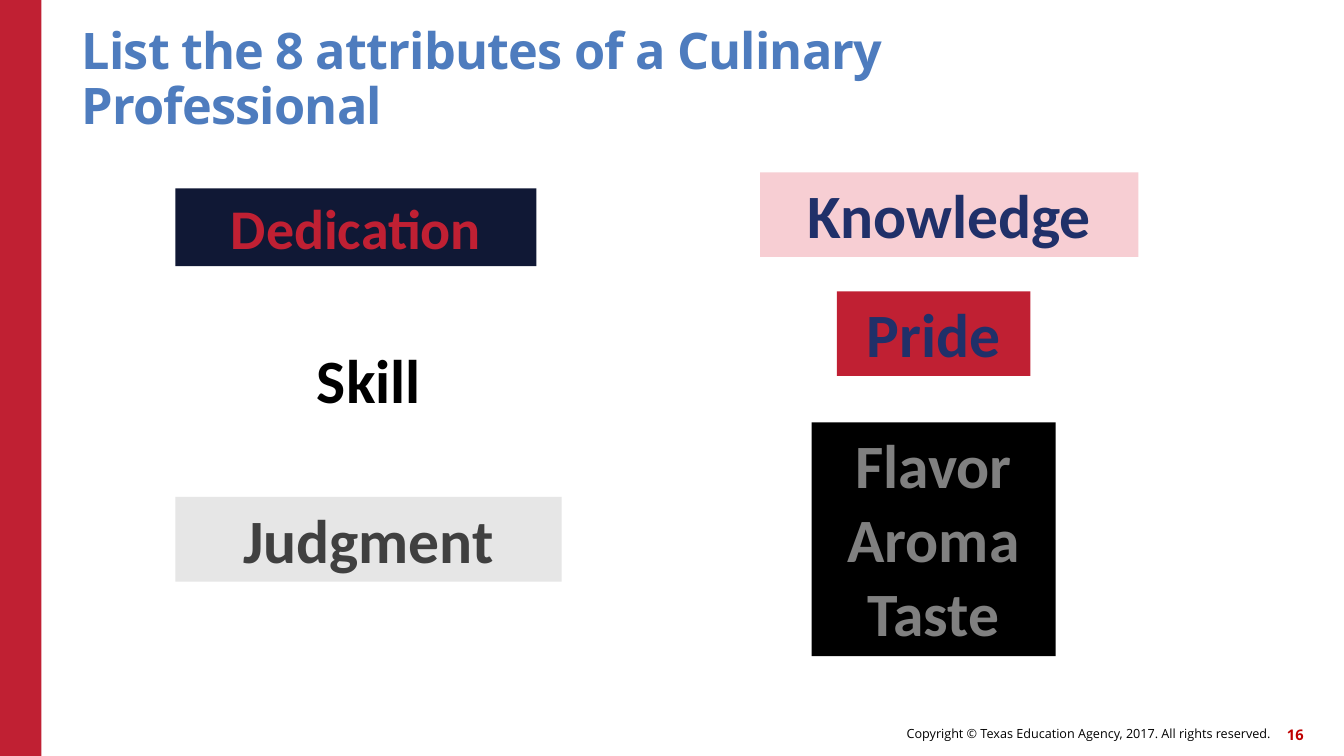
from dataclasses import dataclass
from typing import Optional

from pptx import Presentation
from pptx.dml.color import RGBColor
from pptx.enum.shapes import MSO_SHAPE
from pptx.enum.text import MSO_ANCHOR, MSO_AUTO_SIZE, PP_ALIGN
from pptx.util import Inches, Pt

COLORS = {
    "red": "C02033", "black": "000000", "number": "C00000",
    "title": "4E7CBE", "navy": "101835", "pink": "F7CED3",
    "blue": "203069", "pale": "E6E6E6", "dark": "404040", "gray": "808080",
}


@dataclass
class Trait:
    text: str
    left: float
    top: float
    width: float
    height: float
    color: str
    fill: Optional[str] = None
    size: float = 44


TRAITS = [
    Trait("Dedication", 1.74, 1.87, 3.58, 0.77, "red", "navy", 40),
    Trait("Knowledge", 7.54, 1.71, 3.75, 0.84, "blue", "pink"),
    Trait("Skill", 2.7, 3.34, 1.92, 0.84, "black"),
    Trait("Pride", 8.3, 2.89, 1.92, 0.84, "blue", "red"),
    Trait("Judgment", 1.74, 4.93, 3.83, 0.84, "dark", "pale"),
    Trait("Flavor\nAroma\nTaste", 8.05, 4.19, 2.42, 2.32, "gray", "black"),
]


def rgb(name: str) -> RGBColor:
    return RGBColor.from_string(COLORS[name])


def add_box(slide, left: float, top: float, width: float, height: float,
            fill: Optional[str] = None):
    """Add a filled rectangle, or a plain text box when there is no fill."""
    area = [Inches(n) for n in (left, top, width, height)]
    if fill is None:
        return slide.shapes.add_textbox(*area)
    box = slide.shapes.add_shape(MSO_SHAPE.RECTANGLE, *area)
    box.shadow.inherit = False
    box.fill.solid()
    box.fill.fore_color.rgb = rgb(fill)
    box.line.fill.background()
    return box


def write(box, text: str, *, size: float, color: str, font: str = "Open Sans",
          bold: bool = True, align=PP_ALIGN.RIGHT, anchor=MSO_ANCHOR.MIDDLE,
          inset: bool = False, grow: bool = False,
          leading: Optional[float] = None, track: float = 0) -> None:
    """Fill a box with one paragraph; a newline becomes a line break."""
    frame = box.text_frame
    frame.word_wrap = True
    frame.vertical_anchor = anchor
    frame.auto_size = (MSO_AUTO_SIZE.SHAPE_TO_FIT_TEXT if grow
                       else MSO_AUTO_SIZE.NONE)
    if not inset:
        frame.margin_left = frame.margin_right = 0
        frame.margin_top = frame.margin_bottom = 0
    para = frame.paragraphs[0]
    para.text = text
    para.alignment = align
    if leading:
        para.line_spacing = leading
    for run in para.runs:
        run.font.name = font
        run.font.size = Pt(size)
        run.font.bold = bold
        run.font.color.rgb = rgb(color)
        if track:
            run.font._element.set("spc", str(round(track * 100)))


def add_trait(slide, trait: Trait) -> None:
    box = add_box(slide, trait.left, trait.top, trait.width, trait.height,
                  trait.fill)
    write(box, trait.text, size=trait.size, color=trait.color, font="Calibri",
          align=PP_ALIGN.CENTER, anchor=MSO_ANCHOR.TOP, inset=True, grow=True)


def main() -> None:
    deck = Presentation()
    deck.slide_width, deck.slide_height = Inches(13.33), Inches(7.5)
    slide = deck.slides.add_slide(deck.slide_layouts[6])

    add_box(slide, 0, 0, 0.41, 7.5, "red")
    write(add_box(slide, 6.14, 7.12, 6.46, 0.32),
          "Copyright © Texas Education Agency, 2017. All rights reserved.",
          size=9, color="black", bold=False)
    write(add_box(slide, 12.51, 7.13, 0.42, 0.32), "16",
          size=10.5, color="number")
    write(add_box(slide, 0.81, 0.38, 10.9, 0.96),
          "List the 8 attributes of a Culinary Professional",
          size=36, color="title", align=PP_ALIGN.LEFT,
          anchor=MSO_ANCHOR.BOTTOM, leading=0.9, track=-0.6)
    for trait in TRAITS:
        add_trait(slide, trait)

    deck.save("out.pptx")


if __name__ == "__main__":
    main()
